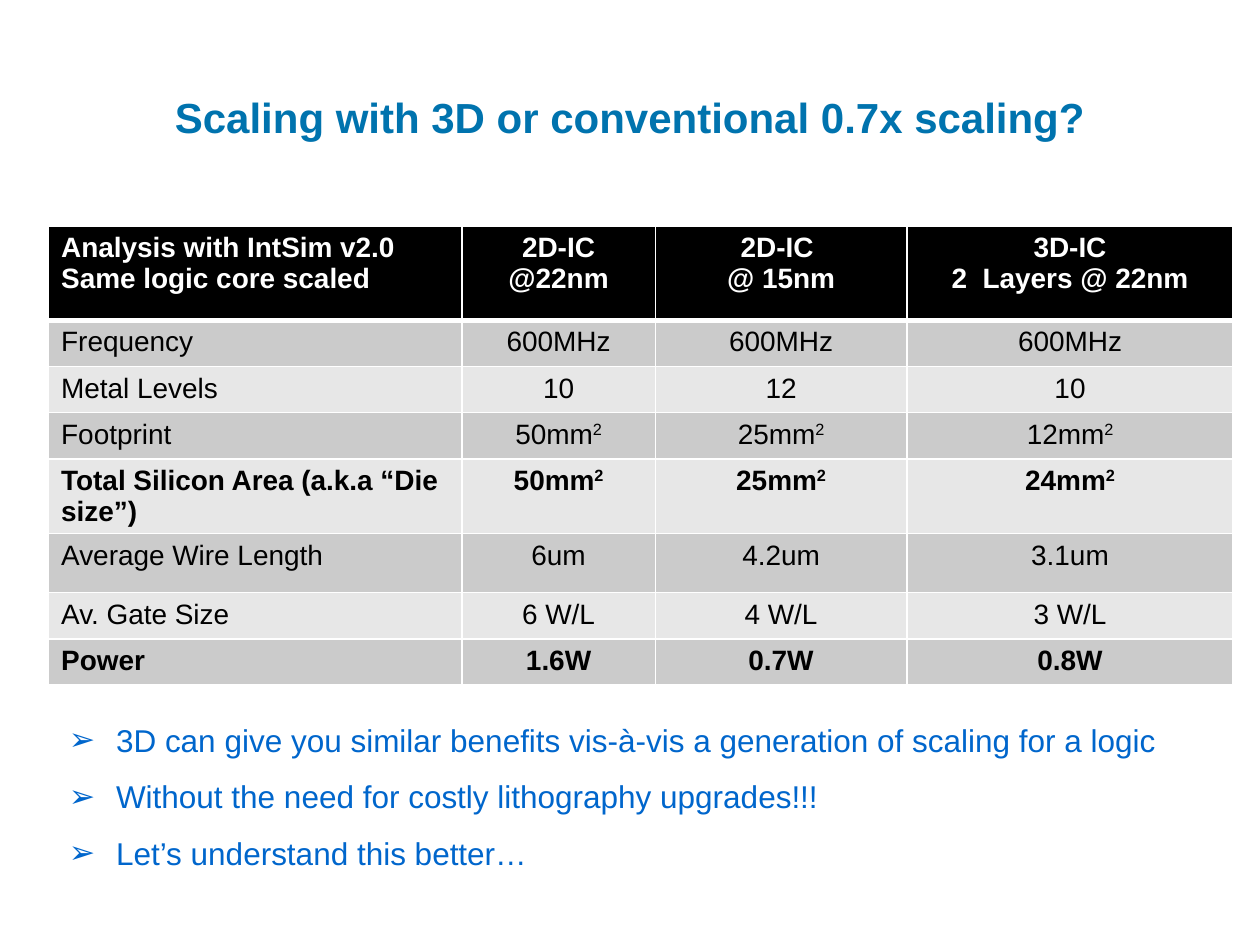
"""Builds a slide that compares 3D stacking with conventional scaling."""
from lxml import etree
from pptx import Presentation
from pptx.dml.color import RGBColor
from pptx.enum import text
from pptx.oxml import ns
from pptx.util import Cm, Pt

TITLE = "Scaling with 3D or conventional 0.7x scaling?"
ROWS = [
    ("Analysis with IntSim v2.0\nSame logic core scaled", "2D-IC\n@22nm",
     "2D-IC \n@ 15nm", "3D-IC\n2  Layers @ 22nm"),
    ("Frequency", "600MHz", "600MHz", "600MHz"),
    ("Metal Levels", "10", "12", "10"),
    ("Footprint", "50mm^2", "25mm^2", "12mm^2"),
    ("Total Silicon Area (a.k.a “Die size”)", "50mm^2", "25mm^2", "24mm^2"),
    ("Average Wire Length", "6um", "4.2um", "3.1um"),
    ("Av. Gate Size", "6 W/L", "4 W/L", "3 W/L"),
    ("Power", "1.6W", "0.7W", "0.8W"),
]
POINTS = [
    "3D can give you similar benefits vis-à-vis a generation of scaling for a logic",
    "Without the need for costly lithography upgrades!!!",
    "Let’s understand this better…",
]
WIDTHS = [8.33, 3.9, 5.07, 6.58]
HEIGHTS = [1.9, 0.93, 0.93, 0.93, 1.5, 1.19, 0.93, 0.93]
BOLD = {0, 4, 7}


def hue(code):
    return RGBColor.from_string(code)


def style(font, size, color, bold=False):
    font.name, font.size, font.bold = "Arial", Pt(size), bold
    font.color.rgb = hue(color)


def place(shape, left, top, width, height):
    shape.left, shape.top = Cm(left), Cm(top)
    shape.width, shape.height = Cm(width), Cm(height)


def add(parent, tag, **attrs):
    return etree.SubElement(parent, ns.qn(tag), attrs)


def edge(cell, row):
    props = cell._tc.get_or_add_tcPr()
    thick = {("lnB", 0), ("lnT", 1)}
    for side in ("lnL", "lnR", "lnT", "lnB"):
        width = Pt(3 if (side, row) in thick else 1)
        line = add(props, f"a:{side}", w=str(width))
        add(add(line, "a:solidFill"), "a:srgbClr", val="FFFFFF")


def write(cell, words, row, col):
    for num, line in enumerate(words.split("\n")):
        frame = cell.text_frame
        para = frame.add_paragraph() if num else frame.paragraphs[0]
        para.alignment = text.PP_ALIGN.CENTER if col else text.PP_ALIGN.LEFT
        for power, part in enumerate(line.split("^")):
            run = para.add_run()
            run.text = part
            style(run.font, 16, "000000" if row else "FFFFFF", row in BOLD)
            if power:
                run._r.get_or_add_rPr().set("baseline", "30000")


def grid(slide):
    table = slide.shapes.add_table(
        len(ROWS), len(WIDTHS), Cm(0.98), Cm(4.56),
        Cm(sum(WIDTHS)), Cm(sum(HEIGHTS))).table
    for col, width in zip(table.columns, WIDTHS):
        col.width = Cm(width)
    for line, height in zip(table.rows, HEIGHTS):
        line.height = Cm(height)
    for row, words in enumerate(ROWS):
        for col, word in enumerate(words):
            cell = table.cell(row, col)
            edge(cell, row)
            cell.fill.solid()
            shade = ("CBCBCB" if row % 2 else "E7E7E7") if row else "000000"
            cell.fill.fore_color.rgb = hue(shade)
            write(cell, word, row, col)


def notes(slide):
    box = slide.shapes.add_textbox(Cm(1.14), Cm(14.02), Cm(22.86), Cm(1.78))
    frame = box.text_frame
    frame.word_wrap = True
    frame.text = "\n".join(POINTS)
    for para in frame.paragraphs:
        props = para._p.get_or_add_pPr()
        props.set("marL", str(Cm(0.95)))
        props.set("indent", str(Cm(-0.95)))
        add(props, "a:buFont", typeface="Arial")
        add(props, "a:buChar", char="➢")
        para.line_spacing = 1.5
        style(para.runs[0].font, 18, "0066CC")


def main():
    deck = Presentation()
    deck.slide_width, deck.slide_height = Cm(25.4), Cm(19.05)
    slide = deck.slides.add_slide(deck.slide_layouts[5])
    title = slide.shapes.title
    place(title, 1.27, 0.76, 22.86, 3.18)
    title.text_frame.text = TITLE
    title.text_frame.vertical_anchor = text.MSO_ANCHOR.MIDDLE
    para = title.text_frame.paragraphs[0]
    para.alignment = text.PP_ALIGN.CENTER
    style(para.runs[0].font, 24, "0073AE", True)
    grid(slide)
    notes(slide)
    deck.save("out.pptx")


if __name__ == "__main__":
    main()
